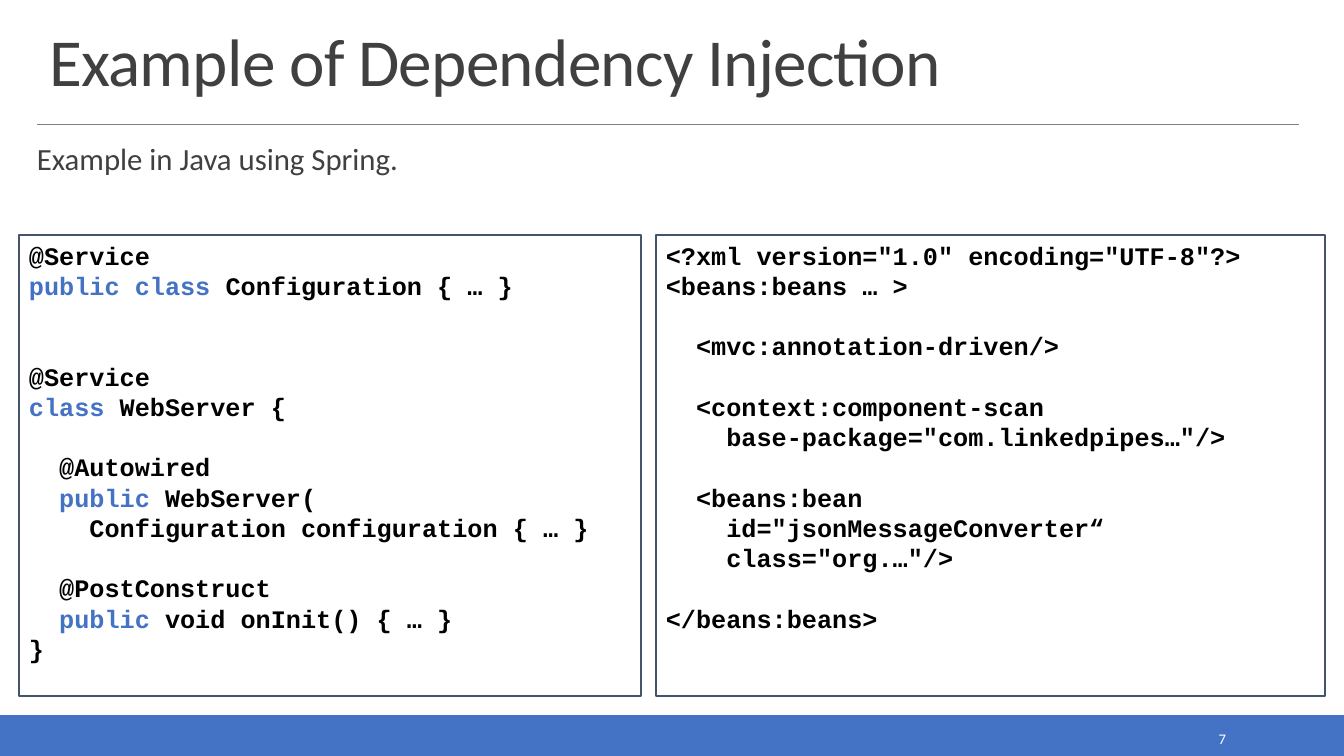
from dataclasses import dataclass
from itertools import groupby

from lxml import etree
from pptx import Presentation
from pptx.dml.color import RGBColor
from pptx.enum.shapes import MSO_AUTO_SHAPE_TYPE, MSO_CONNECTOR
from pptx.enum.text import MSO_ANCHOR, MSO_AUTO_SIZE, PP_ALIGN
from pptx.oxml.ns import qn
from pptx.shapes.autoshape import Shape
from pptx.slide import Slide
from pptx.text.text import _Paragraph
from pptx.util import Emu, Pt

RECTANGLE = MSO_AUTO_SHAPE_TYPE.RECTANGLE
STRAIGHT = MSO_CONNECTOR.STRAIGHT
TOP, MIDDLE, BOTTOM = MSO_ANCHOR.TOP, MSO_ANCHOR.MIDDLE, MSO_ANCHOR.BOTTOM
LEFT, RIGHT = PP_ALIGN.LEFT, PP_ALIGN.RIGHT
NO_AUTOFIT = MSO_AUTO_SIZE.NONE

BLUE = RGBColor(0x44, 0x72, 0xC4)
SLATE = RGBColor(0x44, 0x54, 0x6A)
DARK_GRAY = RGBColor(0x40, 0x40, 0x40)
GRAY = RGBColor(0x80, 0x80, 0x80)
BLACK = RGBColor(0x00, 0x00, 0x00)
WHITE = RGBColor(0xFF, 0xFF, 0xFF)

TEXT_FONT = "Calibri"
CODE_FONT = "Courier New"
CODE_LINE = Pt(21.6)
KEYWORDS = {"public", "class"}
TITLE_ONLY_LAYOUT = 5
EMU_PER_PX = 914400 / 100.8
SLIDE_WIDTH, SLIDE_HEIGHT = 1344, 756

JAVA_CODE = """\
@Service
public class Configuration { … }


@Service
class WebServer {

  @Autowired
  public WebServer(
    Configuration configuration { … }

  @PostConstruct
  public void onInit() { … }
}"""

XML_CODE = """\
<?xml version="1.0" encoding="UTF-8"?>
<beans:beans … >

  <mvc:annotation-driven/>

  <context:component-scan
    base-package="com.linkedpipes…"/>

  <beans:bean
    id="jsonMessageConverter“
    class="org.…"/>

</beans:beans>"""


@dataclass(frozen=True)
class Box:
    left: int
    top: int
    width: int
    height: int


@dataclass(frozen=True)
class CodePanel:
    box: Box
    code: str


CODE_PANELS = [
    CodePanel(Box(19, 235, 622, 461), JAVA_CODE),
    CodePanel(Box(656, 235, 669, 461), XML_CODE),
]


def px(length: int) -> Emu:
    return Emu(round(length * EMU_PER_PX))


def edges(box: Box) -> tuple[Emu, Emu, Emu, Emu]:
    return px(box.left), px(box.top), px(box.width), px(box.height)


def format_paragraph(paragraph: _Paragraph, size: float, color: RGBColor,
                     alignment: PP_ALIGN = LEFT) -> None:
    paragraph.alignment = alignment
    paragraph.font.name = TEXT_FONT
    paragraph.font.size = Pt(size)
    paragraph.font.color.rgb = color


def add_title(slide: Slide, box: Box, text: str) -> None:
    title = slide.shapes.title
    title.left, title.top, title.width, title.height = edges(box)
    frame = title.text_frame
    frame.text = text
    frame.auto_size = NO_AUTOFIT
    frame.vertical_anchor = BOTTOM
    paragraph = frame.paragraphs[0]
    format_paragraph(paragraph, 48, DARK_GRAY)
    paragraph.line_spacing = 0.85
    paragraph.runs[0]._r.get_or_add_rPr().set("spc", "-50")


def add_text(slide: Slide, box: Box, text: str) -> Shape:
    shape = slide.shapes.add_textbox(*edges(box))
    shape.text_frame.word_wrap = True
    shape.text_frame.text = text
    return shape


def add_subtitle(slide: Slide, box: Box, text: str) -> None:
    frame = add_text(slide, box, text).text_frame
    frame.margin_left = frame.margin_right = 0
    frame.margin_top = frame.margin_bottom = px(4)
    paragraph = frame.paragraphs[0]
    format_paragraph(paragraph, 22, DARK_GRAY)
    paragraph.line_spacing = 0.9


def add_slide_number(slide: Slide, box: Box, number: str) -> None:
    frame = add_text(slide, box, number).text_frame
    frame.vertical_anchor = MIDDLE
    format_paragraph(frame.paragraphs[0], 10.5, WHITE, RIGHT)


def add_rule(slide: Slide, left: int, right: int, top: int) -> None:
    rule = slide.shapes.add_connector(STRAIGHT, px(left), px(top), px(right), px(top))
    rule.line.color.rgb = GRAY
    rule.line.width = Pt(0.5)
    etree.SubElement(rule._element.spPr, qn("a:effectLst"))


def add_rectangle(slide: Slide, box: Box, line: RGBColor, line_width: float) -> Shape:
    rectangle = slide.shapes.add_shape(RECTANGLE, *edges(box))
    rectangle.shadow.inherit = False
    rectangle.line.color.rgb = line
    rectangle.line.width = Pt(line_width)
    return rectangle


def add_footer_bar(slide: Slide, box: Box) -> None:
    bar = add_rectangle(slide, box, BLUE, 1.25)
    bar.fill.solid()
    bar.fill.fore_color.rgb = BLUE


def write_code_line(paragraph: _Paragraph, line: str) -> None:
    """Write one line of code, with its keywords in blue."""
    paragraph.alignment = LEFT
    paragraph.font.name = CODE_FONT
    paragraph.font.size = Pt(18)
    paragraph.font.bold = True
    words = [word + " " for word in line.split(" ")]
    words[-1] = words[-1].rstrip()
    for is_keyword, group in groupby(words, lambda word: word.strip() in KEYWORDS):
        run = paragraph.add_run()
        run.text = "".join(group)
        run.font.color.rgb = BLUE if is_keyword else BLACK


def add_code_panel(slide: Slide, panel: CodePanel) -> None:
    """Draw a framed listing; empty code lines become space before the next."""
    shape = add_rectangle(slide, panel.box, SLATE, 1.5)
    shape.fill.background()
    frame = shape.text_frame
    frame.word_wrap = True
    frame.vertical_anchor = TOP
    paragraph = frame.paragraphs[0]
    empty_lines = 0
    for index, line in enumerate(panel.code.splitlines()):
        if not line:
            empty_lines += 1
            continue
        if index:
            paragraph = frame.add_paragraph()
            paragraph.space_before = Emu(empty_lines * CODE_LINE)
        write_code_line(paragraph, line)
        empty_lines = 0


def main() -> None:
    presentation = Presentation()
    presentation.slide_width = px(SLIDE_WIDTH)
    presentation.slide_height = px(SLIDE_HEIGHT)
    slide = presentation.slides.add_slide(presentation.slide_layouts[TITLE_ONLY_LAYOUT])
    add_footer_bar(slide, Box(0, 716, SLIDE_WIDTH, 40))
    add_rule(slide, 37, 1299, 124)
    add_title(slide, Box(39, 20, 1262, 85), "Example of Dependency Injection")
    add_subtitle(slide, Box(37, 140, 603, 67), "Example in Java using Spring.")
    add_slide_number(slide, Box(1092, 725, 144, 28), "7")
    for panel in CODE_PANELS:
        add_code_panel(slide, panel)
    presentation.save("out.pptx")


if __name__ == "__main__":
    main()
